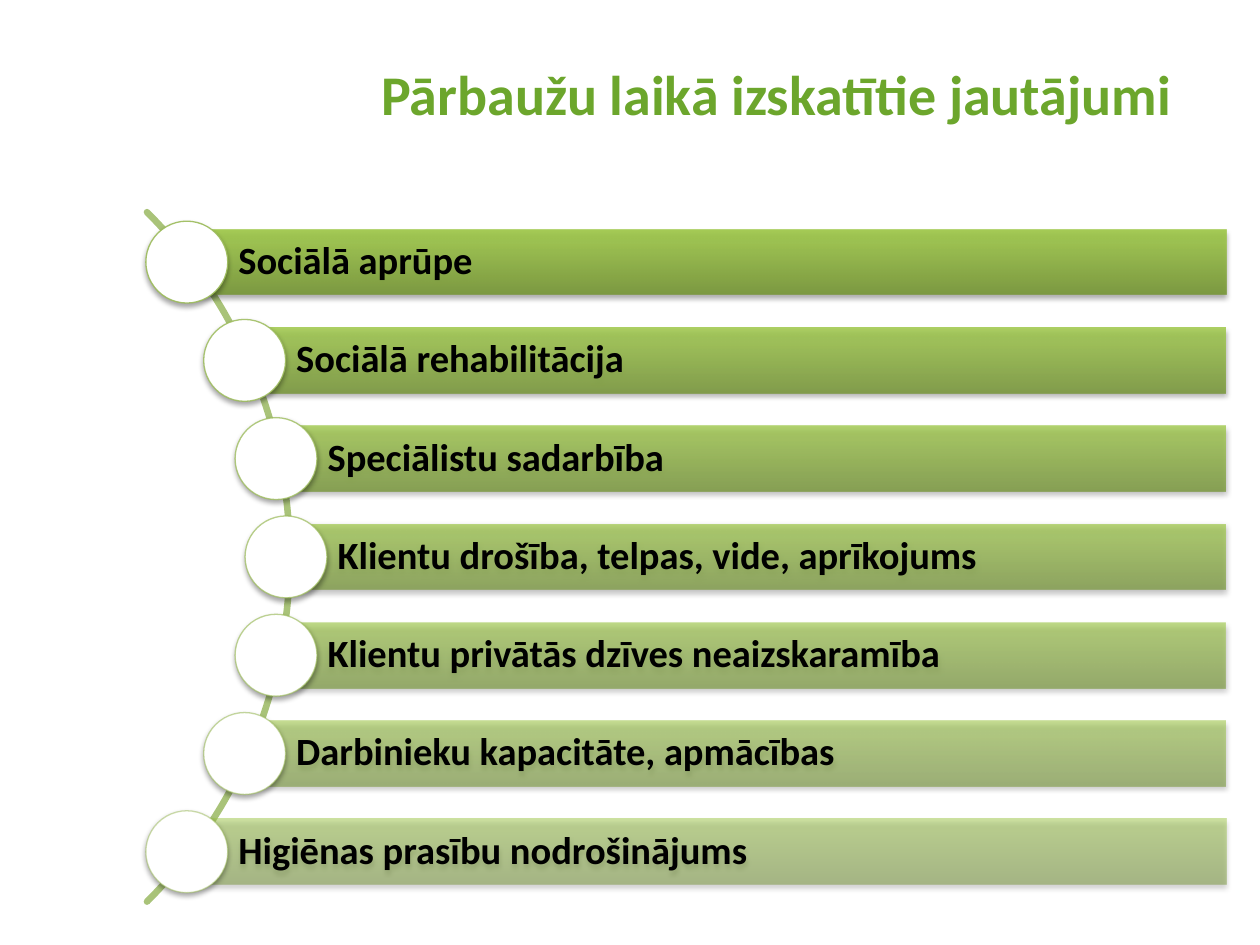
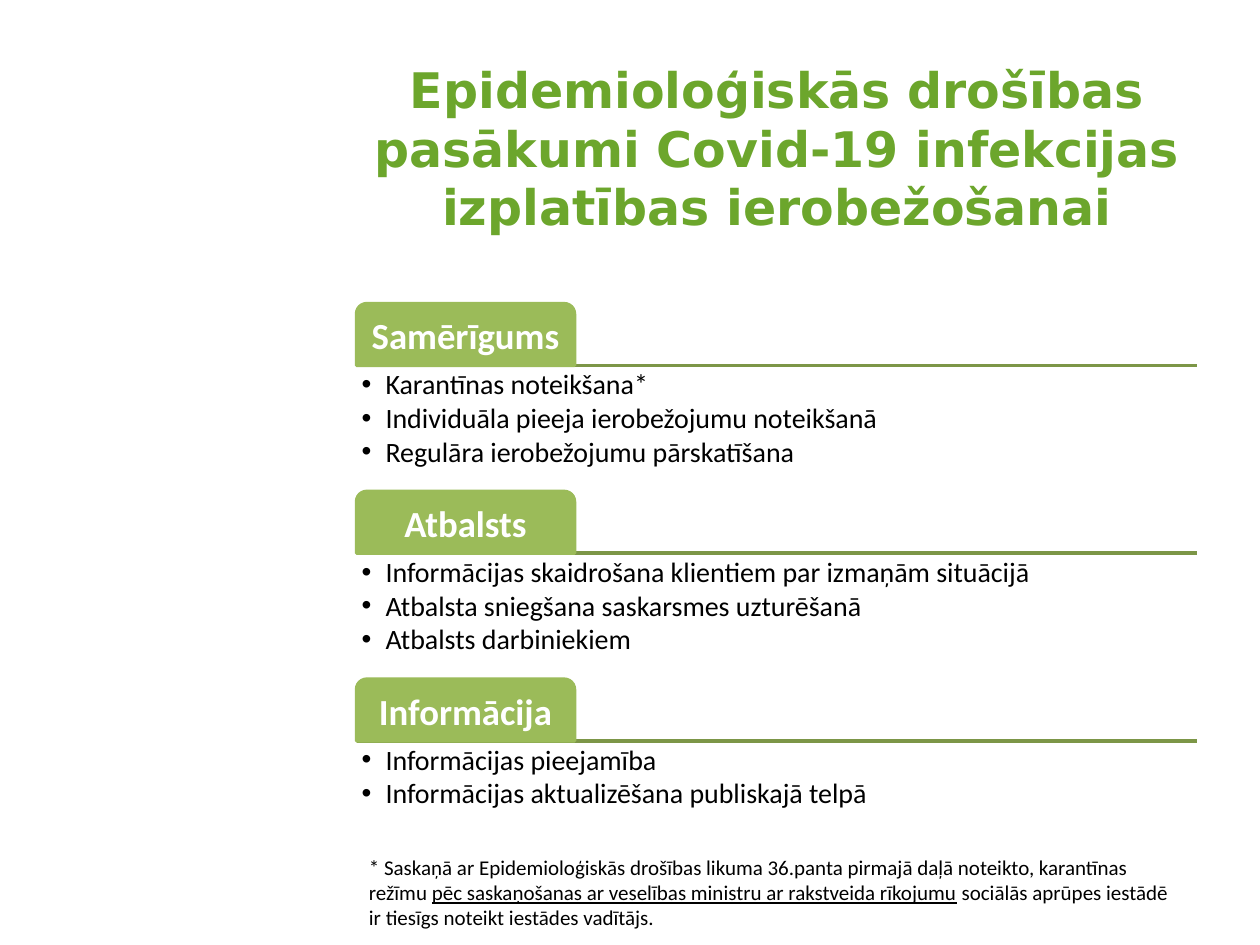
from dataclasses import dataclass
from math import cos, radians, sin, sqrt

from lxml.etree import SubElement
from pptx import Presentation
from pptx.dml.color import RGBColor
from pptx.enum.shapes import MSO_CONNECTOR, MSO_SHAPE
from pptx.enum.text import MSO_ANCHOR, MSO_AUTO_SIZE, PP_ALIGN
from pptx.oxml import parse_xml
from pptx.oxml.ns import nsdecls, qn
from pptx.util import Inches, Pt

# Shared colours and fonts
TITLE_GREEN = RGBColor(0x6C, 0xA6, 0x2C)
ARC_GREEN = RGBColor(0xA9, 0xC3, 0x79)
TAB_GREEN = RGBColor(0x9B, 0xBB, 0x59)
RULE_GREEN = RGBColor(0x7C, 0x96, 0x47)
BAR_STOPS = (
    (0, RGBColor(0x77, 0x97, 0x37)),
    (80, RGBColor(0x9B, 0xC3, 0x48)),
    (100, RGBColor(0x9D, 0xC7, 0x46)),
)
WHITE = RGBColor(0xFF, 0xFF, 0xFF)
BLACK = RGBColor(0, 0, 0)
BODY_FONT = "Calibri"

# Shared column of titles and sections, in inches
COLUMN_LEFT, COLUMN_WIDTH = 2.83, 6.67

# Arc with its row of topics, in inches
ARC_X, ARC_Y, ARC_RADIUS = -1.57, 4.42, 3.87
CIRCLE_SIZE, CIRCLE_SHIFT = 0.65, -0.03
BAR_RIGHT, BAR_HEIGHT = 9.73, 0.52
TOPIC_PITCH = 0.78

# Sections, in inches
FIRST_TAB_TOP, SECTION_PITCH = 2.41, 1.49
TAB_WIDTH, TAB_HEIGHT, LIST_HEIGHT = 1.73, 0.49, 0.98

TOPICS = (
    "Sociālā aprūpe",
    "Sociālā rehabilitācija",
    "Speciālistu sadarbība",
    "Klientu drošība, telpas, vide, aprīkojums",
    "Klientu privātās dzīves neaizskaramība",
    "Darbinieku kapacitāte, apmācības",
    "Higiēnas prasību nodrošinājums",
)


@dataclass(frozen=True)
class Section:
    heading: str
    points: tuple[str, ...]


@dataclass(frozen=True)
class Span:
    text: str
    underline: bool = False


SECTIONS = (
    Section("Samērīgums", (
        "Karantīnas noteikšana*",
        "Individuāla pieeja ierobežojumu noteikšanā",
        "Regulāra ierobežojumu pārskatīšana",
    )),
    Section("Atbalsts", (
        "Informācijas skaidrošana klientiem par izmaņām situācijā",
        "Atbalsta sniegšana saskarsmes uzturēšanā",
        "Atbalsts darbiniekiem",
    )),
    Section("Informācija", (
        "Informācijas pieejamība",
        "Informācijas aktualizēšana publiskajā telpā",
    )),
)

FOOTNOTE = (
    Span("* Saskaņā ar Epidemioloģiskās drošības likuma 36.panta pirmajā daļā "
         "noteikto, karantīnas režīmu "),
    Span("pēc saskaņošanas ar veselības ministru ar rakstveida rīkojumu", True),
    Span(" sociālās aprūpes iestādē ir tiesīgs noteikt iestādes vadītājs."),
)


# Text
def write_text(frame, paragraphs, *, size: float, color: RGBColor = BLACK,
               font: str = BODY_FONT, bold: bool = False, align=PP_ALIGN.LEFT,
               anchor=MSO_ANCHOR.TOP, insets=(0.1, 0.05, 0.1, 0.05),
               line_spacing: float | None = None, space_after: float = 0,
               bullet: bool = False) -> None:
    """Fill a text frame; each paragraph is a string or a sequence of Spans."""
    frame.word_wrap = True
    frame.auto_size = MSO_AUTO_SIZE.NONE
    frame.vertical_anchor = anchor
    (frame.margin_left, frame.margin_top,
     frame.margin_right, frame.margin_bottom) = map(Inches, insets)
    for index, content in enumerate(paragraphs):
        para = frame.add_paragraph() if index else frame.paragraphs[0]
        para.alignment = align
        para.space_after = Pt(space_after)
        if line_spacing:
            para.line_spacing = line_spacing
        if bullet:
            properties = para._p.get_or_add_pPr()
            properties.set("marL", str(Inches(0.19)))
            properties.set("indent", str(-Inches(0.19)))
            SubElement(properties, qn("a:buFont")).set("typeface", "Arial")
            SubElement(properties, qn("a:buChar")).set("char", "•")
        for span in (Span(content),) if isinstance(content, str) else content:
            run = para.add_run()
            run.text = span.text
            run.font.name = font
            run.font.size = Pt(size)
            run.font.bold = bold
            run.font.color.rgb = color
            if span.underline:
                run.font.underline = True


def add_titled_page(deck, title: str, *, height: float, size: float, font: str):
    page = deck.slides.add_slide(deck.slide_layouts[5])
    box = page.shapes.title
    box.left, box.top = Inches(COLUMN_LEFT), Inches(0.42)
    box.width, box.height = Inches(COLUMN_WIDTH), Inches(height)
    write_text(box.text_frame, [title], size=size, font=font, bold=True,
               color=TITLE_GREEN, align=PP_ALIGN.CENTER)
    return page


# Shapes
def add_plain_shape(page, kind, left: float, top: float, width: float, height: float):
    shape = page.shapes.add_shape(
        kind, Inches(left), Inches(top), Inches(width), Inches(height))
    shape.shadow.inherit = False
    return shape


def add_text_box(page, left: float, top: float, width: float, height: float):
    return page.shapes.add_textbox(
        Inches(left), Inches(top), Inches(width), Inches(height)).text_frame


def add_soft_shadow(shape) -> None:
    effects = shape._element.spPr.find(qn("a:effectLst"))
    effects.append(parse_xml(
        f'<a:outerShdw {nsdecls("a")} blurRad="{Pt(3.1)}" dist="{Pt(1.8)}" '
        'dir="5400000" rotWithShape="0"><a:srgbClr val="000000">'
        '<a:alpha val="35000"/></a:srgbClr></a:outerShdw>'))


def fill_bar(shape, opacity: int) -> None:
    """Upward three-stop gradient with one opacity (thousandths of a percent)."""
    stops = "".join(
        f'<a:gs pos="{position * 1000}"><a:srgbClr val="{color}">'
        f'<a:alpha val="{opacity}"/></a:srgbClr></a:gs>'
        for position, color in BAR_STOPS)
    shape.fill.gradient()
    properties = shape._element.spPr
    properties.replace(properties.find(qn("a:gradFill")), parse_xml(
        f'<a:gradFill {nsdecls("a")} rotWithShape="1"><a:gsLst>{stops}</a:gsLst>'
        '<a:lin ang="16200000" scaled="0"/></a:gradFill>'))


def add_arc(page) -> None:
    points = [(Inches(ARC_X + ARC_RADIUS * cos(radians(angle))),
               Inches(ARC_Y + ARC_RADIUS * sin(radians(angle))))
              for angle in range(-45, 46)]
    builder = page.shapes.build_freeform(*points[0])
    builder.add_line_segments(points[1:], close=False)
    arc = builder.convert_to_shape()
    arc.shadow.inherit = False
    arc.fill.background()
    arc.line.color.rgb = ARC_GREEN
    arc.line.width = Pt(3.75)
    arc.line._ln.set("cap", "rnd")


def add_topic(page, index: int, topic: str) -> None:
    offset = (index - (len(TOPICS) - 1) / 2) * TOPIC_PITCH
    center_x = ARC_X + sqrt(ARC_RADIUS ** 2 - offset ** 2) + CIRCLE_SHIFT
    center_y = ARC_Y + offset
    opacity = round(90000 - 40000 * index / (len(TOPICS) - 1))

    bar = add_plain_shape(page, MSO_SHAPE.RECTANGLE, center_x,
                          center_y - BAR_HEIGHT / 2, BAR_RIGHT - center_x, BAR_HEIGHT)
    fill_bar(bar, opacity)
    bar.line.fill.background()
    add_soft_shadow(bar)
    write_text(bar.text_frame, [topic], size=22, bold=True, line_spacing=0.9,
               anchor=MSO_ANCHOR.MIDDLE, insets=(0.41, 0.06, 0.06, 0.06))

    circle = add_plain_shape(page, MSO_SHAPE.OVAL, center_x - CIRCLE_SIZE / 2,
                             center_y - CIRCLE_SIZE / 2, CIRCLE_SIZE, CIRCLE_SIZE)
    circle.fill.solid()
    circle.fill.fore_color.rgb = WHITE
    circle.line.color.rgb = TAB_GREEN
    circle.line.width = Pt(0.75)
    line_color = next(circle.line._ln.iter(qn("a:srgbClr")))
    SubElement(line_color, qn("a:alpha")).set("val", str(opacity))
    add_soft_shadow(circle)


def add_section(page, index: int, section: Section) -> None:
    top = FIRST_TAB_TOP + index * SECTION_PITCH
    base = top + TAB_HEIGHT
    rule = page.shapes.add_connector(
        MSO_CONNECTOR.STRAIGHT, Inches(COLUMN_LEFT), Inches(base),
        Inches(COLUMN_LEFT + COLUMN_WIDTH), Inches(base))
    rule.line.color.rgb = RULE_GREEN
    rule.line.width = Pt(2)
    SubElement(rule._element.spPr, qn("a:effectLst"))

    tab = add_plain_shape(page, MSO_SHAPE.ROUND_2_SAME_RECTANGLE,
                          COLUMN_LEFT, top, TAB_WIDTH, TAB_HEIGHT)
    tab.adjustments[0], tab.adjustments[1] = 0.167, 0
    tab.fill.solid()
    tab.fill.fore_color.rgb = TAB_GREEN
    tab.line.color.rgb = TAB_GREEN
    tab.line.width = Pt(2)
    write_text(tab.text_frame, [section.heading], size=21, bold=True, color=WHITE,
               align=PP_ALIGN.CENTER, anchor=MSO_ANCHOR.MIDDLE, line_spacing=0.9,
               insets=(0.04, 0.07, 0.04, 0.04))

    points = add_text_box(page, COLUMN_LEFT, base, COLUMN_WIDTH, LIST_HEIGHT)
    write_text(points, section.points, size=16, bullet=True, line_spacing=0.9,
               space_after=2, insets=(0.04,) * 4)


# Slides
def build_topics_page(deck) -> None:
    page = add_titled_page(deck, "Pārbaužu laikā izskatītie jautājumi",
                           height=1.13, size=32, font=BODY_FONT)
    add_arc(page)
    for index, topic in enumerate(TOPICS):
        add_topic(page, index, topic)


def build_measures_page(deck) -> None:
    page = add_titled_page(
        deck,
        "Epidemioloģiskās drošības pasākumi Covid-19 infekcijas "
        "izplatības ierobežošanai",
        height=1.36, size=28, font="DejaVu Sans")
    for index, section in enumerate(SECTIONS):
        add_section(page, index, section)
    footnote = add_text_box(page, COLUMN_LEFT, 6.73, COLUMN_WIDTH, 0.71)
    write_text(footnote, [FOOTNOTE], size=12)


def main() -> None:
    deck = Presentation()
    deck.slide_width, deck.slide_height = Inches(10), Inches(7.5)
    build_topics_page(deck)
    build_measures_page(deck)
    deck.save("out.pptx")


if __name__ == "__main__":
    main()
